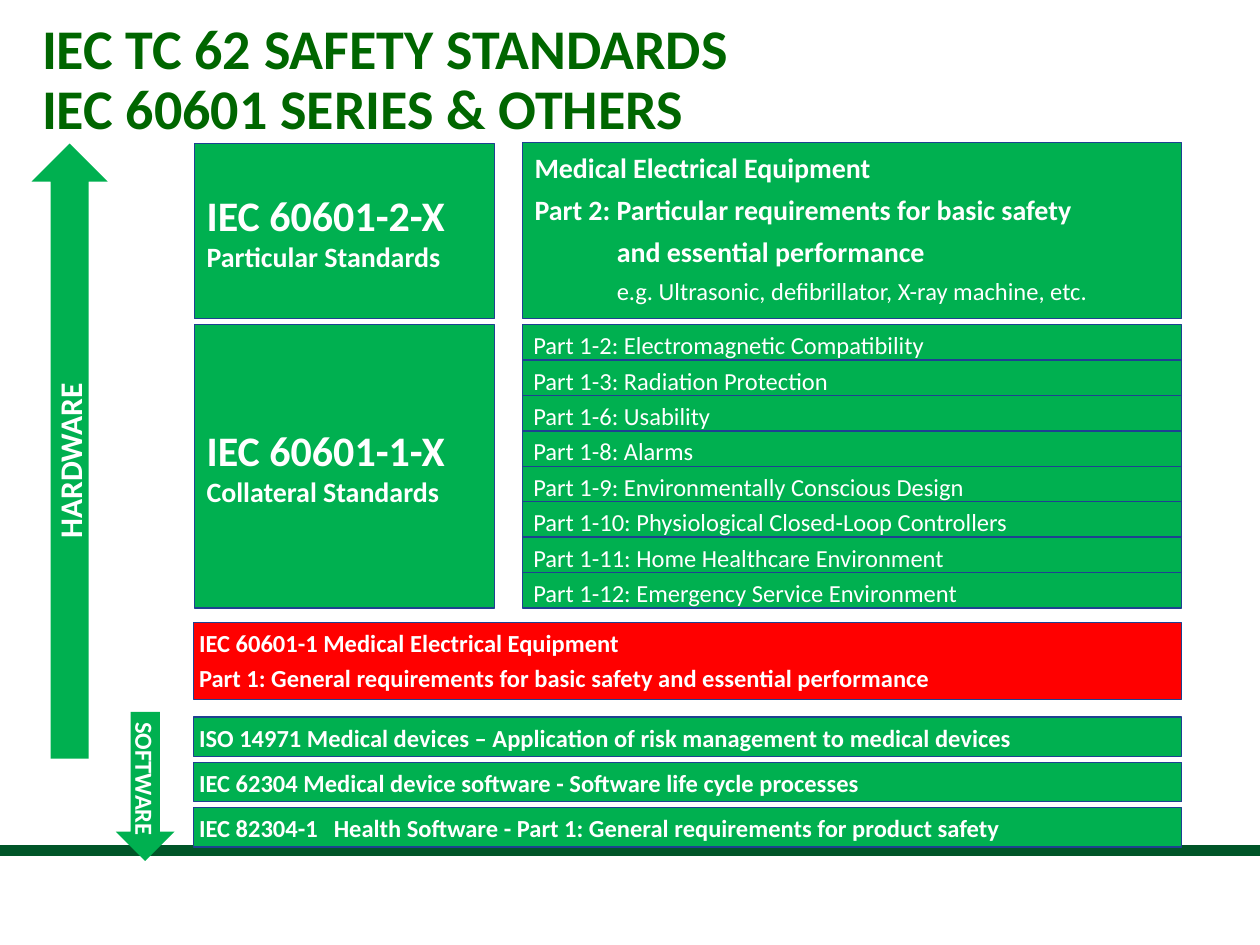
from dataclasses import dataclass

from lxml import etree
from pptx import Presentation
from pptx.dml.color import RGBColor
from pptx.enum.shapes import MSO_CONNECTOR, MSO_SHAPE
from pptx.enum.text import MSO_ANCHOR, PP_ALIGN
from pptx.oxml.ns import qn
from pptx.util import Pt

RECTANGLE, DOWN_ARROW = MSO_SHAPE.RECTANGLE, MSO_SHAPE.DOWN_ARROW
TOP, MIDDLE = MSO_ANCHOR.TOP, MSO_ANCHOR.MIDDLE
LEFT, CENTER = PP_ALIGN.LEFT, PP_ALIGN.CENTER


@dataclass(frozen=True)
class Theme:
    font: str = "Calibri"
    green: RGBColor = RGBColor(0x00, 0xB0, 0x50)
    red: RGBColor = RGBColor(0xFF, 0x00, 0x00)
    white: RGBColor = RGBColor(0xFF, 0xFF, 0xFF)
    border: RGBColor = RGBColor(0x1E, 0x41, 0x91)
    title_green: RGBColor = RGBColor(0x00, 0x66, 0x00)
    rule_green: RGBColor = RGBColor(0x00, 0x55, 0x28)
    title: int = 32
    heading: int = 24
    arrow: int = 18
    label: int = 16
    body: int = 14


theme = Theme()

deck = Presentation()
deck.slide_width, deck.slide_height = Pt(720), Pt(540)
page = deck.slides.add_slide(deck.slide_layouts[6])


def add_block(kind, left, top, width, height, fill=theme.green, border=True,
              insets=(7.2, 3.6, 7.2, 3.6), anchor=MIDDLE):
    block = page.shapes.add_shape(kind, Pt(left), Pt(top), Pt(width), Pt(height))
    block.shadow.inherit = False
    block.fill.solid()
    block.fill.fore_color.rgb = fill
    if border:
        block.line.color.rgb = theme.border
        block.line.width = Pt(0.75)
    else:
        block.line.fill.background()
    frame = block.text_frame
    frame.word_wrap = True
    frame.vertical_anchor = anchor
    (frame.margin_left, frame.margin_top,
     frame.margin_right, frame.margin_bottom) = map(Pt, insets)
    return block


def write_lines(frame, lines, color=theme.white, align=LEFT, spacing=None, tab=None):
    """Write one paragraph for each (text, size, bold, indent)."""
    for index, (text, size, bold, indent) in enumerate(lines):
        para = frame.add_paragraph() if index else frame.paragraphs[0]
        para.text = text
        para.alignment = align
        if spacing:
            para.line_spacing = spacing
        properties = para._p.get_or_add_pPr()
        if indent:
            properties.set("marL", str(Pt(indent)))
        if tab:
            stops = etree.SubElement(properties, qn("a:tabLst"))
            etree.SubElement(stops, qn("a:tab"), pos=str(Pt(tab)), algn="l")
        para.font.name = theme.font
        para.font.size = Pt(size)
        para.font.bold = bold
        para.font.color.rgb = color


# Rule across the foot of the page
rule = page.shapes.add_connector(MSO_CONNECTOR.STRAIGHT, 0, Pt(486), Pt(720), Pt(486))
rule.line.color.rgb = theme.rule_green
rule.line.width = Pt(6)
etree.SubElement(rule._element.spPr, qn("a:effectLst"))

# Title
title = add_block(RECTANGLE, 24, 12, 675, 78.5, theme.white, False, (0, 0, 0, 0), TOP)
write_lines(title.text_frame,
            [("IEC TC 62 SAFETY STANDARDS", theme.title, True, 0),
             ("IEC 60601 SERIES & OTHERS", theme.title, True, 0)],
            theme.title_green, spacing=0.9)

# Standard families on the left
families = [
    ("IEC 60601-2-X", "Particular Standards", 82, 100),
    ("IEC 60601-1-X", "Collateral Standards", 185.5, 162),
]
for number, name, top, height in families:
    family = add_block(RECTANGLE, 111, top, 171.5, height)
    write_lines(family.text_frame, [(number, theme.heading, True, 0),
                                    (name, theme.label, True, 0)])

# Particular requirements
particular = add_block(RECTANGLE, 298.75, 81.5, 376.5, 100.5,
                       insets=(0, 0, 7.2, 3.6), anchor=TOP)
write_lines(particular.text_frame, [
    ("Medical Electrical Equipment", theme.label, True, 6.75),
    ("Part 2: Particular requirements for basic safety", theme.label, True, 6.75),
    ("and essential performance", theme.label, True, 53.75),
    ("e.g. Ultrasonic, defibrillator, X-ray machine, etc.", theme.body, False, 53.75),
], spacing=1.25)

# Collateral parts, stacked in equal rows
collateral_parts = [
    "Part 1-2: Electromagnetic Compatibility",
    "Part 1-3: Radiation Protection",
    "Part 1-6: Usability",
    "Part 1-8: Alarms",
    "Part 1-9: Environmentally Conscious Design",
    "Part 1-10: Physiological Closed-Loop Controllers",
    "Part 1-11: Home Healthcare Environment",
    "Part 1-12: Emergency Service Environment",
]
row_height = 162 / len(collateral_parts)
for row, text in enumerate(collateral_parts):
    part = add_block(RECTANGLE, 298.75, 185.5 + row * row_height, 376.5, row_height,
                     insets=(6, 2.9, 2.9, 0))
    write_lines(part.text_frame, [(text, theme.body, False, 0)])

# General and related standards, full width
general_standards = [
    (355.75, 44, theme.red,
     ["IEC 60601-1 Medical Electrical Equipment",
      "Part 1: General requirements for basic safety and essential performance"]),
    (409.75, 22.5, theme.green,
     ["ISO 14971 Medical devices – Application of risk management to medical devices"]),
    (435.75, 22.5, theme.green,
     ["IEC 62304 Medical device software - Software life cycle processes"]),
    (461.5, 22.5, theme.green,
     ["IEC 82304-1\tHealth Software - Part 1: General requirements for product safety"]),
]
for top, height, fill, texts in general_standards:
    standard = add_block(RECTANGLE, 110.75, top, 564.5, height, fill,
                         insets=(3, 0, 7.2, 3.6), anchor=TOP)
    write_lines(standard.text_frame, [(text, theme.body, True, 0) for text in texts],
                spacing=Pt(20), tab=77)

# Hardware and software arrows
arrows = [
    ("HARDWARE", theme.arrow, 18, 82, 43.5, 351.5, 180),
    ("SOFTWARE", theme.body, 66.25, 406.75, 33.5, 85.25, 0),
]
for text, size, left, top, width, height, turn in arrows:
    arrow = add_block(DOWN_ARROW, left, top, width, height, border=False,
                      insets=(0, 0, 0, 0))
    arrow.rotation = turn
    arrow.text_frame._txBody.bodyPr.set("vert", "vert")
    write_lines(arrow.text_frame, [(text, size, True, 0)], align=CENTER)

deck.save("out.pptx")
